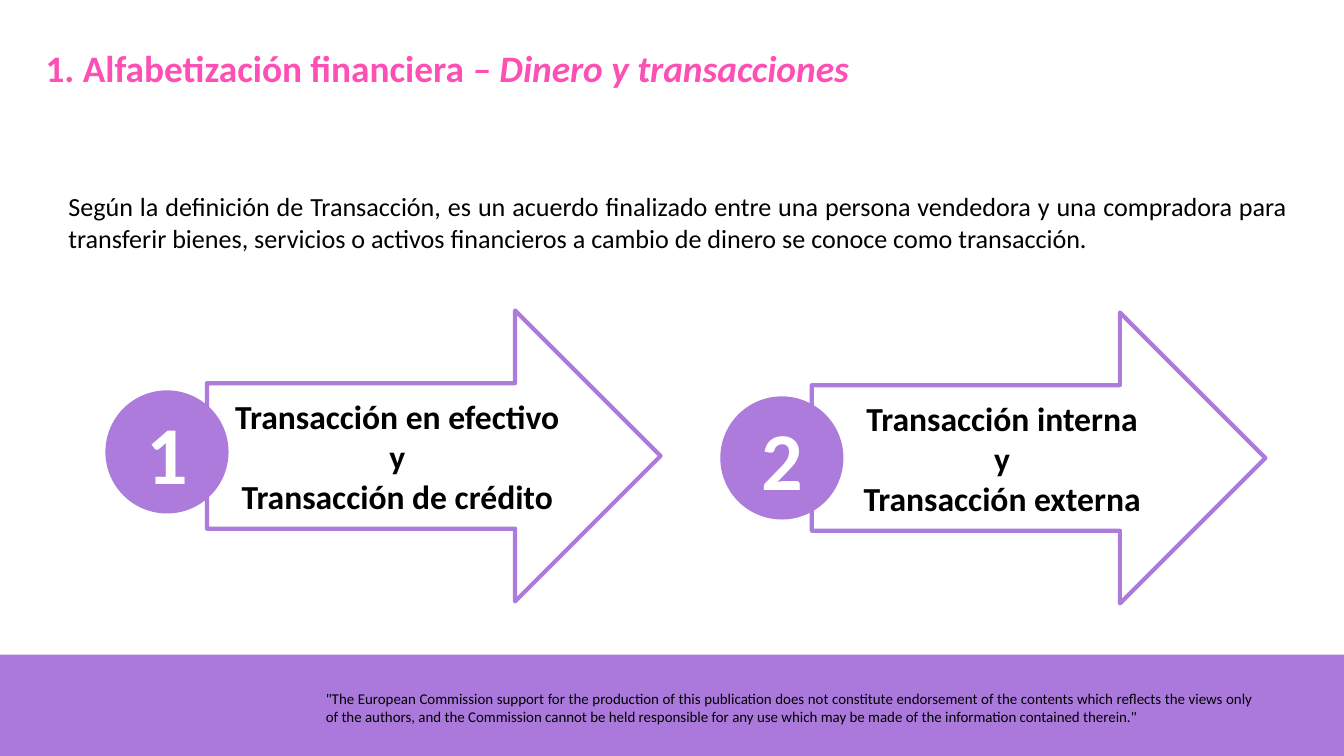
from pptx import Presentation
from pptx.dml.color import RGBColor
from pptx.enum.shapes import MSO_SHAPE
from pptx.enum.text import MSO_ANCHOR, PP_ALIGN
from pptx.util import Pt

COLOURS = {"pink": "FD4FB4", "purple": "AC7BDC", "band": "AB79DB",
           "black": "000000", "white": "FFFFFF"}
PAGE_WIDTH, PAGE_HEIGHT = 1440, 810

TITLE = {"size": Pt(40), "bold": True}
BODY = {"size": Pt(28)}
LABEL = {"size": Pt(36), "bold": True}
NUMBER = {"size": Pt(88), "bold": True}
NOTICE = {"size": Pt(16)}

# Each step: number, label lines, arrow box, circle box
ARROW_SIZE, CIRCLE_SIZE = (486, 311.76), (127.44, 127.44)
STEPS = [
    ("1", ["Transacción en efectivo", "y", "Transacción de crédito"],
     (221.76, 332.64, *ARROW_SIZE), (115.2, 420.48, *CIRCLE_SIZE)),
    ("2", ["Transacción interna", "y", "Transacción externa"],
     (869.76, 334.8, *ARROW_SIZE), (774, 426.96, *CIRCLE_SIZE)),
]


def colour(name):
    return RGBColor.from_string(COLOURS[name])


def add_span(para, text, formats, ink):
    span = para.add_run()
    span.text = text
    for name, value in {"name": "Calibri", **formats}.items():
        setattr(span.font, name, value)
    span.font.color.rgb = colour(ink)


def add_text_box(page, box, spans, ink, align=PP_ALIGN.LEFT):
    frame = page.shapes.add_textbox(*map(Pt, box)).text_frame
    frame.word_wrap = True
    para = frame.paragraphs[0]
    para.alignment = align
    for text, formats in spans:
        add_span(para, text, formats, ink)
    return para


def add_figure(page, kind, box, fill=None, line=None):
    figure = page.shapes.add_shape(kind, *map(Pt, box))
    figure.shadow.inherit = False
    if fill:
        figure.fill.solid()
        figure.fill.fore_color.rgb = colour(fill)
    else:
        figure.fill.background()
    if line:
        figure.line.color.rgb = colour(line)
        figure.line.width = Pt(4.5)
    else:
        figure.line.fill.background()
    return figure


def add_centred_lines(figure, lines, formats, ink):
    frame = figure.text_frame
    frame.word_wrap = True
    frame.vertical_anchor = MSO_ANCHOR.MIDDLE
    for index, text in enumerate(lines):
        para = frame.add_paragraph() if index else frame.paragraphs[0]
        para.alignment = PP_ALIGN.CENTER
        add_span(para, text, formats, ink)


def add_footer(page, box):
    left, top, width, height = box
    add_figure(page, MSO_SHAPE.RECTANGLE, box, fill="band")
    notice = (
        "\"The European Commission support for the production of this "
        "publication does not constitute endorsement of the contents which "
        "reflects the views only of the authors, and the Commission cannot be "
        "held responsible for any use which may be made of the information "
        "contained therein.\"")
    para = add_text_box(page, (left + 342, top + 33.84, 1008, 39.6),
                        [(notice, NOTICE)], "black", PP_ALIGN.JUSTIFY)
    para.line_spacing = 1.01


def add_heading(page, box):
    add_text_box(page, box, [
        ("1. Alfabetización financiera ", TITLE),
        ("– Dinero y transacciones", {**TITLE, "italic": True})], "pink")


def add_definition(page, box):
    definition = (
        "Según la definición de Transacción, es un acuerdo finalizado entre "
        "una persona vendedora y una compradora para transferir bienes, "
        "servicios o activos financieros a cambio de dinero se conoce como "
        "transacción.")
    add_text_box(page, box, [(definition, BODY)], "black", PP_ALIGN.JUSTIFY)


def add_step(page, number, lines, arrow_box, circle_box):
    arrow = add_figure(page, MSO_SHAPE.RIGHT_ARROW, arrow_box, line="purple")
    add_centred_lines(arrow, lines, LABEL, "black")
    circle = add_figure(page, MSO_SHAPE.OVAL, circle_box, "purple", "purple")
    add_centred_lines(circle, [number], NUMBER, "white")


def main():
    deck = Presentation()
    deck.slide_width, deck.slide_height = Pt(PAGE_WIDTH), Pt(PAGE_HEIGHT)
    page = deck.slides.add_slide(deck.slide_layouts[6])
    add_footer(page, (0, 701.28, PAGE_WIDTH, PAGE_HEIGHT - 701.28))
    add_heading(page, (41.76, 44.64, 984.24, 55.44))
    add_definition(page, (66.24, 200.88, 1319.76, 74.88))
    for step in STEPS:
        add_step(page, *step)
    deck.save("out.pptx")


if __name__ == "__main__":
    main()
